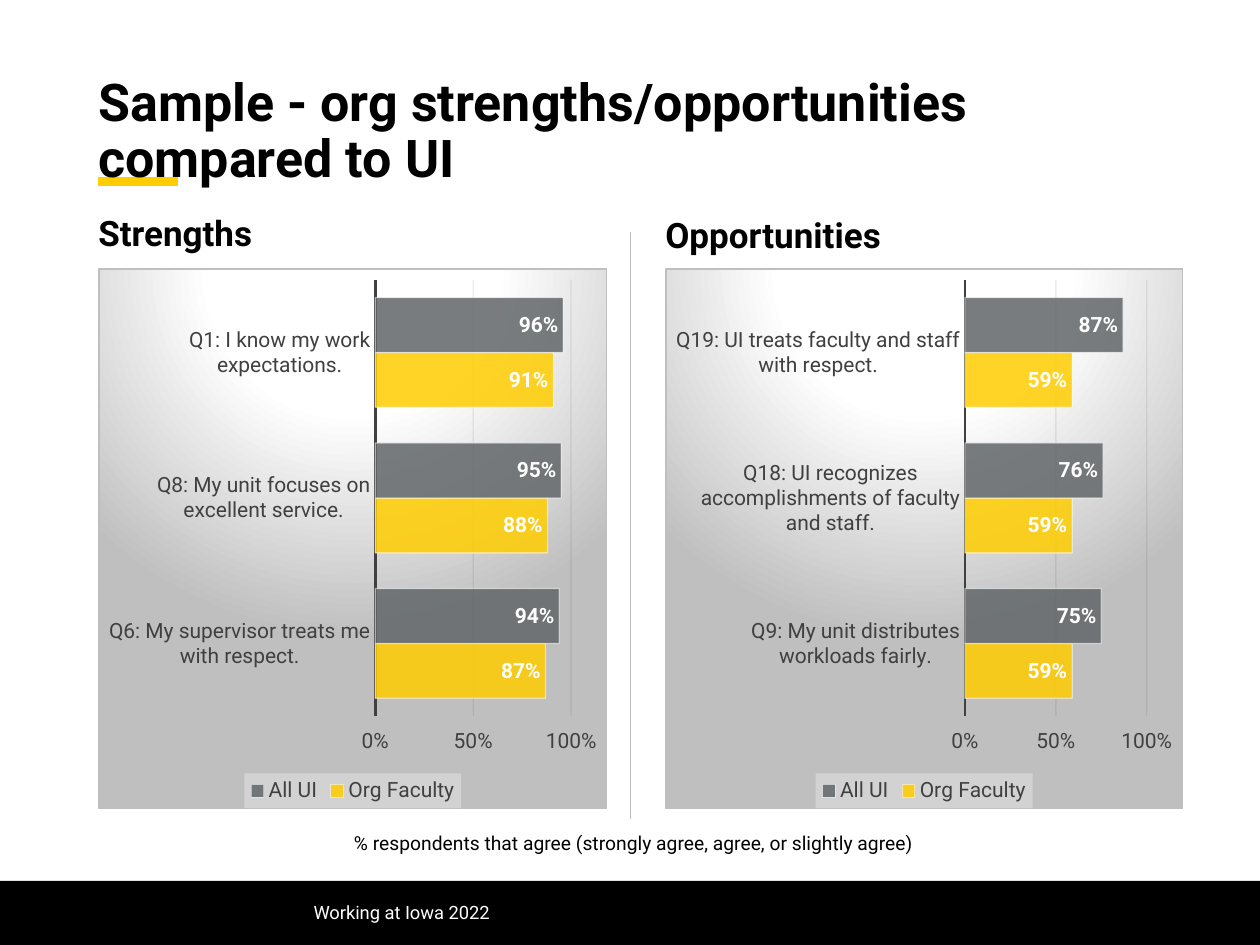
from dataclasses import dataclass

from lxml import etree
from pptx import Presentation
from pptx import util as u
from pptx.chart import data as cd
from pptx.dml.color import RGBColor
from pptx.enum import chart as ch
from pptx.enum import shapes as sh
from pptx.enum import text as tx
from pptx.oxml import parse_xml
from pptx.oxml.ns import nsdecls, qn

FONT = "Roboto"
BLACK = RGBColor(0, 0, 0)
WHITE = RGBColor(255, 255, 255)
GOLD = RGBColor(0xFF, 0xCD, 0x00)
SLATE = RGBColor(0x61, 0x66, 0x69)
DARK = RGBColor(0x40, 0x40, 0x40)
INK = RGBColor(0x0D, 0x0D, 0x0D)
RULE = RGBColor(0xBB, 0xBC, 0xBC)

PANEL = f"""<c:spPr {nsdecls("c", "a")}>
<a:gradFill><a:gsLst>
<a:gs pos="0"><a:srgbClr val="FFFFFF"/></a:gs>
<a:gs pos="39000"><a:srgbClr val="FFFFFF"/></a:gs>
<a:gs pos="100000"><a:srgbClr val="BFBFBF"/></a:gs>
</a:gsLst><a:path path="circle">
<a:fillToRect l="50000" t="-80000" r="50000" b="180000"/></a:path></a:gradFill>
<a:ln w="9525"><a:solidFill><a:srgbClr val="BFBFBF"/></a:solidFill></a:ln>
</c:spPr>"""
KEY = f"""<c:spPr {nsdecls("c", "a")}><a:solidFill><a:srgbClr val="F2F2F2">
<a:alpha val="39000"/></a:srgbClr></a:solidFill></c:spPr>"""


@dataclass
class Panel:
    name: str
    left: float
    top: float
    width: float
    cats: list[str]
    org: list[float]
    total: list[float]


PANELS = [
    Panel("Strengths", 0.78, 1.18, 4.04,
          ["Q6: My supervisor treats me with respect.",
           "Q8: My unit focuses on excellent service.",
           "Q1: I know my work expectations."],
          [0.87, 0.88, 0.91], [0.94, 0.95, 0.96]),
    Panel("Opportunities", 5.28, 1.2, 4.11,
          ["Q9: My unit distributes workloads fairly.",
           "Q18: UI recognizes accomplishments of faculty and staff.",
           "Q19: UI treats faculty and staff with respect."],
          [0.59, 0.59, 0.59], [0.75, 0.76, 0.87]),
]


def style(font, size: float, color: RGBColor, bold: bool = False) -> None:
    font.name, font.size, font.bold = FONT, u.Pt(size), bold
    font.color.rgb = color


def place(shape, left: float, top: float, width: float, height: float) -> None:
    shape.left, shape.top = u.Inches(left), u.Inches(top)
    shape.width, shape.height = u.Inches(width), u.Inches(height)


def write(shape, words: str, size: float, color: RGBColor, bold: bool = False,
          anchor=tx.MSO_ANCHOR.TOP, align=tx.PP_ALIGN.LEFT):
    frame = shape.text_frame
    frame.text = words
    frame.word_wrap = True
    frame.auto_size = tx.MSO_AUTO_SIZE.NONE
    frame.vertical_anchor = anchor
    para = frame.paragraphs[0]
    para.alignment = align
    style(para.runs[0].font, size, color, bold)
    return para


def trim(shape) -> None:
    frame = shape.text_frame
    frame.margin_left = frame.margin_right = 0
    frame.margin_top = frame.margin_bottom = 0


def rule(page, start: tuple, end: tuple, color: RGBColor, width: float) -> None:
    ends = [u.Inches(n) for n in (*start, *end)]
    line = page.shapes.add_connector(sh.MSO_CONNECTOR.STRAIGHT, *ends)
    line.line.color.rgb, line.line.width = color, u.Pt(width)
    etree.SubElement(line._element.spPr, qn("a:effectLst"))


def fade(item, *shares: int) -> None:
    for color, share in zip(item.xpath("./c:spPr//a:srgbClr"), shares):
        etree.SubElement(color, qn("a:alpha")).set("val", str(share * 1000))


def plot(page, panel: Panel) -> None:
    data = cd.CategoryChartData(number_format="0%")
    data.categories = panel.cats
    data.add_series("Org Faculty", panel.org)
    data.add_series("All UI", panel.total)
    spot = [u.Inches(n) for n in (panel.left, 2.13, panel.width, 4.29)]
    chart = page.shapes.add_chart(
        ch.XL_CHART_TYPE.BAR_CLUSTERED, *spot, data).chart
    style(chart.font, 10, BLACK)
    chart.has_title = False
    chart._chartSpace.find(qn("c:chart")).addnext(parse_xml(PANEL))

    chart.has_legend = True
    legend = chart.legend
    legend.position = ch.XL_LEGEND_POSITION.BOTTOM
    legend.include_in_layout = False
    style(legend.font, 12, DARK)
    legend._element.find(qn("c:overlay")).addnext(parse_xml(KEY))

    cat, val = chart.category_axis, chart.value_axis
    for axis in (cat, val):
        style(axis.tick_labels.font, 12, DARK)
    cat.major_tick_mark = ch.XL_TICK_MARK.NONE
    cat.format.line.color.rgb = DARK
    cat.format.line.width = u.Pt(1.5)
    val.minimum_scale, val.maximum_scale, val.major_unit = 0, 1, 0.5
    val.tick_labels.number_format = "0%"
    val.tick_labels.number_format_is_linked = False
    val.format.line.fill.background()
    grid = val.major_gridlines
    grid.format.line.color.rgb = INK
    grid.format.line.width = u.Pt(0.75)
    fade(val._element.find(qn("c:majorGridlines")), 8)

    bars = chart.plots[0]
    bars.gap_width, bars.overlap, bars.vary_by_categories = 65, 0, False
    for series, color in zip(bars.series, (GOLD, SLATE)):
        series.format.fill.solid()
        series.format.fill.fore_color.rgb = color
        series.format.line.color.rgb = WHITE
        series.format.line.width = u.Pt(0.75)
        fade(series._element, 85, 50)
        labels = series.data_labels
        labels.show_value = True
        labels.position = ch.XL_LABEL_POSITION.INSIDE_END
        labels.number_format = "0%"
        labels.number_format_is_linked = False
        style(labels.font, 12, WHITE, True)


def main() -> None:
    deck = Presentation()
    deck.slide_width, deck.slide_height = u.Inches(10), u.Inches(7.5)
    page = deck.slides.add_slide(deck.slide_layouts[4])
    title, left, spare, right, extra = page.placeholders
    for item in (spare, extra):
        item._element.getparent().remove(item._element)

    rule(page, (0.78, 1.44), (1.41, 1.44), GOLD, 5)
    rule(page, (5, 1.84), (5, 6.5), RULE, 0.5)
    band = page.shapes.add_shape(
        sh.MSO_SHAPE.RECTANGLE, 0, u.Inches(6.99), u.Inches(10), u.Inches(0.51))
    band.shadow.inherit = False
    band.fill.solid()
    band.fill.fore_color.rgb = BLACK
    band.line.fill.background()

    page.shapes._spTree.append(title._element)
    place(title, 0.78, 0.58, 8.44, 0.95)
    trim(title)
    write(title, "Sample - org strengths/opportunities compared to UI",
          29.7, BLACK, True, tx.MSO_ANCHOR.MIDDLE).line_spacing = 0.9

    for head, panel in zip((left, right), PANELS):
        place(head, panel.left, panel.top, 3.94, 0.83)
        trim(head)
        para = write(head, panel.name, 20, BLACK, True, tx.MSO_ANCHOR.BOTTOM)
        para.space_before = 0
        plot(page, panel)

    note = page.shapes.add_textbox(0, 0, 0, 0)
    place(note, 0.03, 6.55, 10, 0.29)
    write(note, "% respondents that agree (strongly agree, agree, or slightly agree)",
          11, BLACK, align=tx.PP_ALIGN.CENTER)
    foot = page.shapes.add_textbox(0, 0, 0, 0)
    place(foot, 2.39, 7.04, 7.12, 0.4)
    write(foot, "Working at Iowa 2022", 10.5, WHITE, anchor=tx.MSO_ANCHOR.MIDDLE)
    deck.save("out.pptx")


if __name__ == "__main__":
    main()
